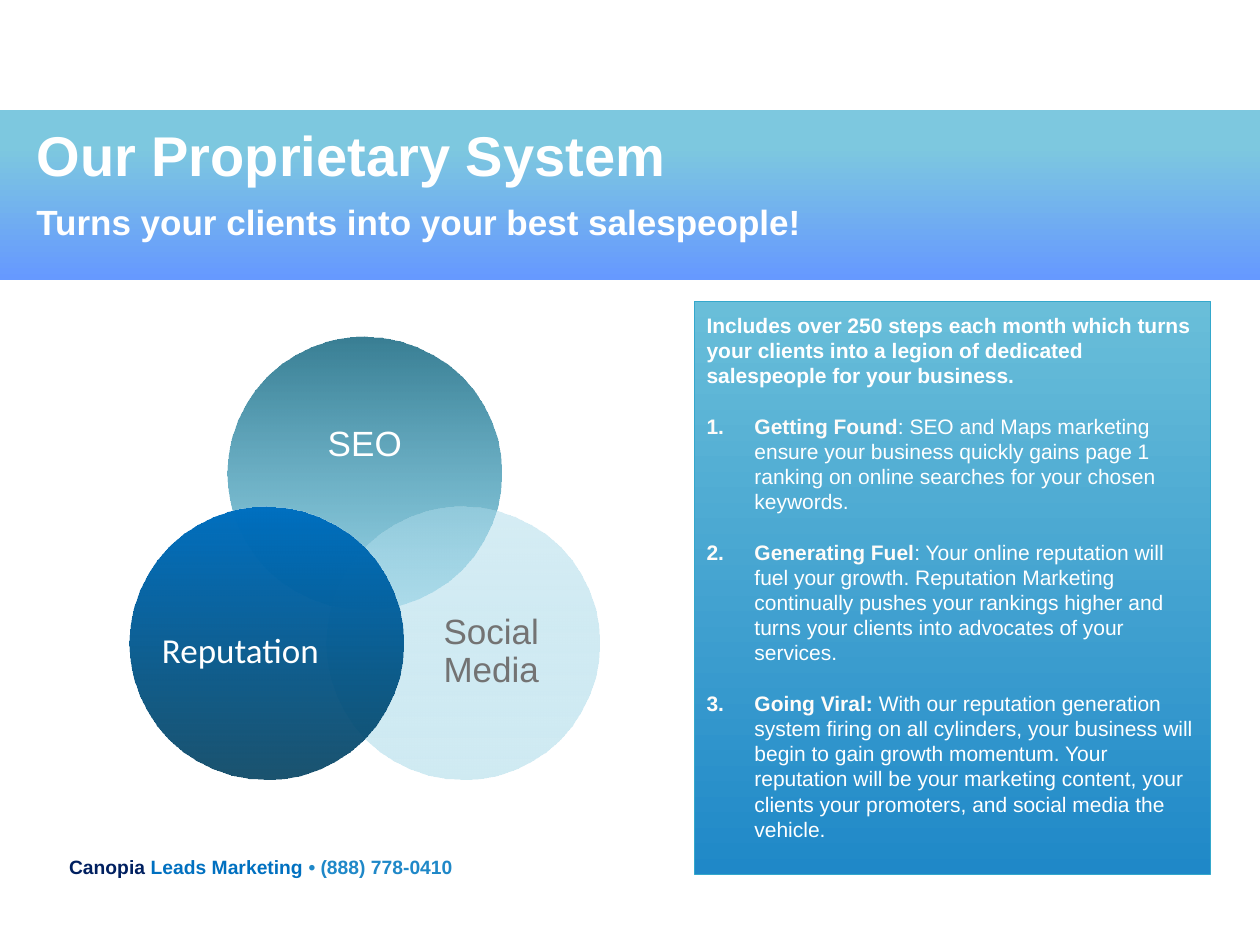
import math
from dataclasses import dataclass

from lxml import etree
from pptx import Presentation
from pptx import util as u
from pptx.dml import color
from pptx.enum import shapes, text
from pptx.oxml import ns

ALIGN = text.PP_ALIGN
ANCHOR = text.MSO_ANCHOR


@dataclass(frozen=True)
class Theme:
    font: str = "Arial"
    accent_font: str = "Calibri"
    white: str = "FFFFFF"
    cream: str = "FFFCF9"
    grey: str = "737373"
    navy: str = "002060"
    blue: str = "0070C0"
    sky: str = "1F88C8"
    teal: str = "34A8CC"
    # Gradient stops run from top to bottom: position %, colour, opacity %
    band: tuple = ((21, "7DC8DF", 100), (100, "6699FF", 100))
    panel: tuple = ((0, "69BED9", 100), (100, "1F88C8", 100))
    seo: tuple = ((0, "227088", 90), (100, "34A8CC", 50))
    social: tuple = ((0, "AEDCEB", 50), (100, "C9E8F1", 88))
    reputation: tuple = ((0, "0070C0", 100), (100, "00405F", 90))
    title_size: float = 32
    heading_size: float = 20
    body_size: float = 12
    footer_size: float = 11


class SlideBuilder:
    """Places elements on a grid of 100 columns by 75 rows."""

    columns, rows = 100, 75

    def __init__(self, presentation, theme):
        self.theme = theme
        self.cell_width = presentation.slide_width / self.columns
        self.cell_height = presentation.slide_height / self.rows
        self.slide = presentation.slides.add_slide(presentation.slide_layouts[5])

    def place(self, box):
        left, top, width, height = box
        return (round(left * self.cell_width), round(top * self.cell_height),
                round(width * self.cell_width), round(height * self.cell_height))

    def gradient_shape(self, kind, box, stops, line=None):
        shape = self.slide.shapes.add_shape(kind, *self.place(box))
        shape.shadow.inherit = False
        shape.fill.gradient()
        shape.fill.gradient_angle = 270
        stop_list = shape._element.spPr.find(".//" + ns.qn("a:gsLst"))
        for old_stop in list(stop_list):
            stop_list.remove(old_stop)
        for position, rgb, opacity in stops:
            stop = etree.SubElement(stop_list, ns.qn("a:gs"), pos=str(position * 1000))
            fill = etree.SubElement(stop, ns.qn("a:srgbClr"), val=rgb)
            etree.SubElement(fill, ns.qn("a:alpha"), val=str(opacity * 1000))
        if line:
            shape.line.color.rgb = color.RGBColor.from_string(line)
            shape.line.width = u.Pt(0.75)
        else:
            shape.line.fill.background()
        return shape

    def text_box(self, box, anchor=ANCHOR.TOP, wrap=True, inset=True):
        frame = self.slide.shapes.add_textbox(*self.place(box)).text_frame
        frame.word_wrap = wrap
        frame.vertical_anchor = anchor
        if not inset:
            frame.margin_left = frame.margin_right = 0
            frame.margin_top = frame.margin_bottom = 0
        return frame

    def add_run(self, paragraph, words, size, rgb=None, bold=False, font=None):
        run = paragraph.add_run()
        run.text = words
        run.font.name = font or self.theme.font
        run.font.size = u.Pt(size)
        run.font.bold = bold
        run.font.color.rgb = color.RGBColor.from_string(rgb or self.theme.white)

    def number(self, paragraph, indent):
        """Give the paragraph an automatic number with a hanging indent."""
        properties = paragraph._p.get_or_add_pPr()
        properties.set("marL", str(u.Inches(indent)))
        properties.set("indent", str(-u.Inches(indent)))
        etree.SubElement(properties, ns.qn("a:buFont"), typeface="+mj-lt")
        etree.SubElement(properties, ns.qn("a:buAutoNum"), type="arabicPeriod")

    def title(self, words, box):
        title = self.slide.shapes.title
        title.left, title.top, title.width, title.height = self.place(box)
        # Bring the title in front of the band drawn before it
        self.slide.shapes._spTree.append(title._element)
        frame = title.text_frame
        frame.auto_size = text.MSO_AUTO_SIZE.NONE
        frame.vertical_anchor = ANCHOR.MIDDLE
        paragraph = frame.paragraphs[0]
        paragraph.alignment = ALIGN.LEFT
        self.add_run(paragraph, words, self.theme.title_size, bold=True)

    def subtitle(self, words, box):
        paragraph = self.text_box(box, ANCHOR.BOTTOM).paragraphs[0]
        self.add_run(paragraph, words, self.theme.heading_size, bold=True)

    def venn(self, center, spread, diameter, circles):
        """Draw circles evenly around a center, starting at the top."""
        for index, (words, stops, offset, size, alignment, rgb, font) in enumerate(circles):
            angle = math.radians(360 / len(circles) * index - 90)
            x = center[0] + spread * math.cos(angle)
            y = center[1] + spread * math.sin(angle)
            self.gradient_shape(shapes.MSO_SHAPE.OVAL,
                                (x - diameter / 2, y - diameter / 2, diameter, diameter), stops)
            frame = self.text_box((x + offset[0], y + offset[1], *size),
                                  ANCHOR.MIDDLE, inset=False)
            paragraph = frame.paragraphs[0]
            paragraph.alignment = alignment
            paragraph.line_spacing = 0.9
            self.add_run(paragraph, words, self.theme.heading_size, rgb, font=font)

    def panel(self, box, intro, steps):
        theme = self.theme
        left, top, width, height = box
        self.gradient_shape(shapes.MSO_SHAPE.RECTANGLE, box, theme.panel, theme.teal)
        frame = self.text_box((left, top + 0.4, width, height))
        paragraph = frame.paragraphs[0]
        for index, words in enumerate(intro):
            paragraph = frame.add_paragraph() if index else paragraph
            self.add_run(paragraph, words, theme.body_size, bold=True)
        for heading, words in steps:
            paragraph.space_after = u.Pt(14.4)
            paragraph = frame.add_paragraph()
            self.number(paragraph, 0.38)
            self.add_run(paragraph, heading, theme.body_size, theme.cream, bold=True)
            self.add_run(paragraph, words, theme.body_size)

    def footer(self, box, parts):
        paragraph = self.text_box(box, wrap=False).paragraphs[0]
        for words, rgb in parts:
            self.add_run(paragraph, words, self.theme.footer_size, rgb, bold=True)


def main():
    theme = Theme()
    presentation = Presentation()
    presentation.slide_width, presentation.slide_height = u.Inches(10), u.Inches(7.5)
    builder = SlideBuilder(presentation, theme)

    builder.gradient_shape(shapes.MSO_SHAPE.RECTANGLE, (0, 8.7, 100, 13.5), theme.band)
    builder.title("Our Proprietary System", (1.9, 9.1, 79.1, 6.2))
    builder.subtitle("Turns your clients into your best salespeople!", (1.9, 15.8, 71, 3.9))
    builder.panel(
        (55.1, 23.9, 41, 45.5),
        ["Includes over 250 steps each month which turns your clients into a legion of dedicated",
         "salespeople for your business."],
        [("Getting Found", ": SEO and Maps marketing ensure your business quickly gains page 1 "
          "ranking on online searches for your chosen keywords."),
         ("Generating Fuel", ": Your online reputation will fuel your growth. Reputation "
          "Marketing continually pushes your rankings higher and turns your clients into "
          "advocates of your services."),
         ("Going Viral: ", "With our reputation generation system firing on all cylinders, your "
          "business will begin to gain growth momentum. Your reputation will be your marketing "
          "content, your clients your promoters, and social media the vehicle.")])
    side_label = (13, 11.9)
    builder.venn((28.95, 46.55), 9, 21.7, [
        ("SEO", theme.seo, (-7.95, -7.05), (15.9, 9.7), ALIGN.CENTER, theme.white, theme.font),
        ("Social Media", theme.social, (-4.25, -5.25), side_label, ALIGN.CENTER,
         theme.grey, theme.font),
        ("Reputation", theme.reputation, (-8.85, -5.25), side_label, ALIGN.RIGHT,
         theme.white, theme.accent_font)])
    builder.footer((4.5, 67.4, 32.6, 2.9), [
        ("Canopia ", theme.navy), ("Leads Marketing ", theme.blue),
        ("• (888) 778-0410", theme.sky)])
    presentation.save("out.pptx")


if __name__ == "__main__":
    main()
